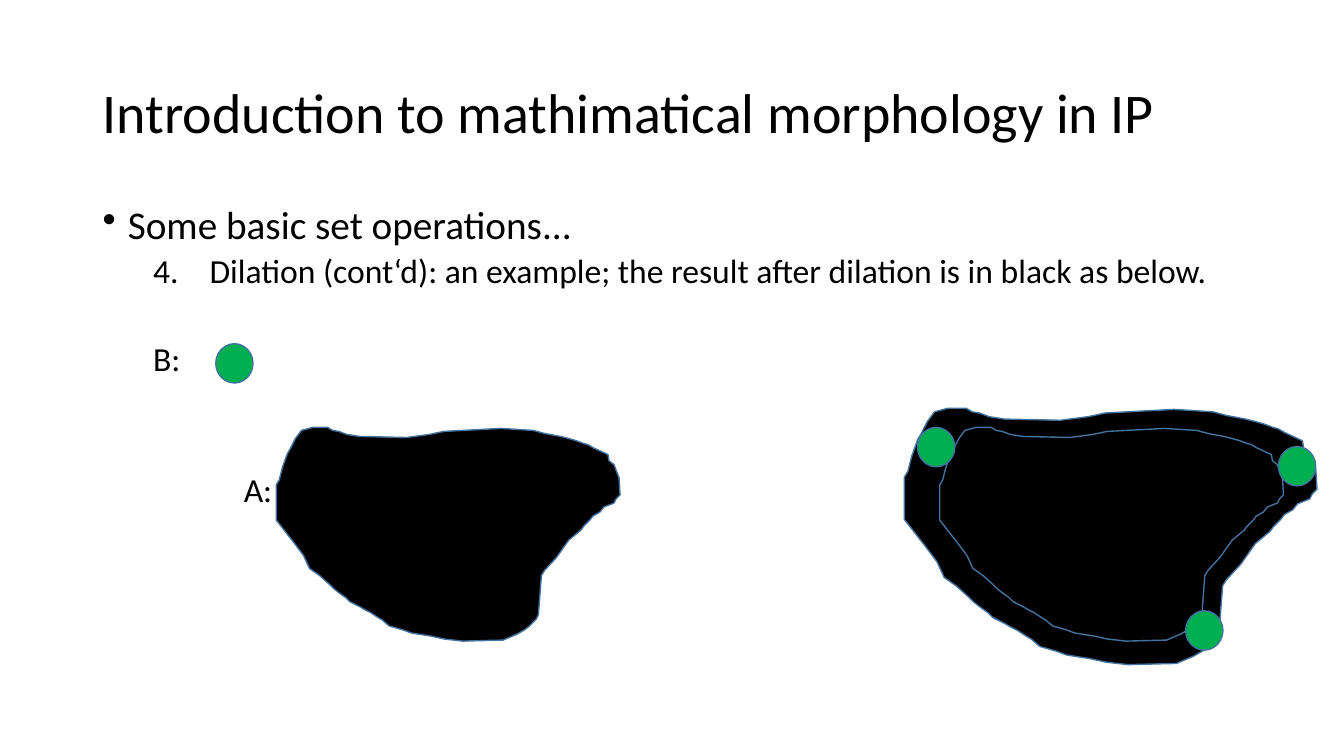
import pptx
import pptx.util
import pptx.dml.color
import pptx.enum.shapes
import pptx.enum.text
from lxml import etree
from pptx.util import Inches

COLOURS = {"black": "000000", "outline": "43739E", "element": "00B050"}
FONT = "Calibri"

# Outline of set A, in hundredths of an inch from its top left corner
SET_OUTLINE = [
    (0, 92), (18, 115), (24, 123), (27, 127), (33, 140), (43, 147),
    (53, 156), (57, 160), (62, 164), (69, 169), (73, 173), (83, 178),
    (88, 181), (94, 184), (100, 188), (105, 191), (112, 197), (126, 201),
    (134, 204), (153, 207), (167, 210), (185, 212), (225, 211), (239, 205),
    (246, 201), (250, 198), (258, 190), (260, 186), (263, 147), (266, 142),
    (278, 129), (290, 112), (302, 102), (305, 98), (311, 92), (314, 88),
    (321, 84), (325, 79), (335, 75), (337, 71), (341, 67), (340, 50),
    (335, 37), (330, 33), (329, 27), (314, 20), (309, 17), (305, 16),
    (297, 13), (290, 11), (282, 9), (266, 6), (255, 3), (223, 1),
    (166, 4), (152, 7), (129, 10), (83, 9), (70, 7), (62, 4), (56, 3),
    (51, 0), (36, 0), (25, 3), (19, 11), (14, 21), (11, 26), (6, 40),
    (3, 52), (0, 57),
]


def rgb(name):
    return pptx.dml.color.RGBColor.from_string(COLOURS[name])


def add_text_box(page, left, top, width, height):
    box = page.shapes.add_textbox(Inches(left), Inches(top), Inches(width), Inches(height))
    box.text_frame.word_wrap = True
    return box.text_frame


def write(para, text, size, before=0):
    para.text = text
    para.line_spacing = 0.9
    para.space_before = pptx.util.Pt(before)
    para.font.size = pptx.util.Pt(size)
    para.font.name = FONT
    para.font.color.rgb = rgb("black")


def indent(para, margin, hanging=0, marker=None, **attributes):
    properties = para._p.get_or_add_pPr()
    properties.set("marL", str(Inches(margin)))
    properties.set("indent", str(-Inches(hanging)))
    if marker:
        etree.SubElement(properties, pptx.oxml.ns.qn("a:" + marker), attributes)


def style(shape, fill):
    shape.shadow.inherit = False
    shape.fill.solid()
    shape.fill.fore_color.rgb = rgb(fill)
    shape.line.color.rgb = rgb("outline")
    shape.line.width = pptx.util.Pt(1)


def add_set(page, left, top, factor=1.0):
    builder = page.shapes.build_freeform(*SET_OUTLINE[0], scale=Inches(0.01) * factor)
    builder.add_line_segments(SET_OUTLINE[1:], close=True)
    style(builder.convert_to_shape(Inches(left), Inches(top)), "black")


def add_element(page, left, top):
    ellipse = page.shapes.add_shape(
        pptx.enum.shapes.MSO_SHAPE.OVAL,
        Inches(left), Inches(top), Inches(0.37), Inches(0.39))
    style(ellipse, "element")


def main():
    deck = pptx.Presentation()
    deck.slide_width, deck.slide_height = Inches(13.33), Inches(7.5)
    page = deck.slides.add_slide(deck.slide_layouts[6])

    # Title
    title = add_text_box(page, 0.92, 0.42, 11.5, 1.45)
    title.vertical_anchor = pptx.enum.text.MSO_ANCHOR.MIDDLE
    write(title.paragraphs[0], "Introduction to mathimatical morphology in IP", 40)

    # Bullet, numbered item and the labels of both sets
    body = add_text_box(page, 0.92, 1.99, 11.5, 4.76)
    bullet = body.paragraphs[0]
    write(bullet, "Some basic set operations...", 28)
    indent(bullet, 0.25, 0.25, "buChar", char="•")
    item = body.add_paragraph()
    write(item, "Dilation (cont‘d): an example; the result after dilation is in black as below.", 24, 5)
    indent(item, 1.06, 0.56, "buAutoNum", type="arabicPeriod", startAt="4")
    for label, margin, before in (("B:", 0.5, 36.4), ("A:", 1.4, 67.7)):
        para = body.add_paragraph()
        write(para, label, 24, before)
        indent(para, margin)

    # Set A, its dilation, and A again inside the dilation
    add_set(page, 2.74, 4.24)
    add_set(page, 8.97, 4.05, 1.2)
    add_set(page, 9.32, 4.24)

    # Structuring element B, alone and along the border of A
    for left, top in ((2.14, 3.41), (9.1, 4.24), (12.68, 4.43), (11.76, 6.06)):
        add_element(page, left, top)

    deck.save("out.pptx")


if __name__ == "__main__":
    main()
